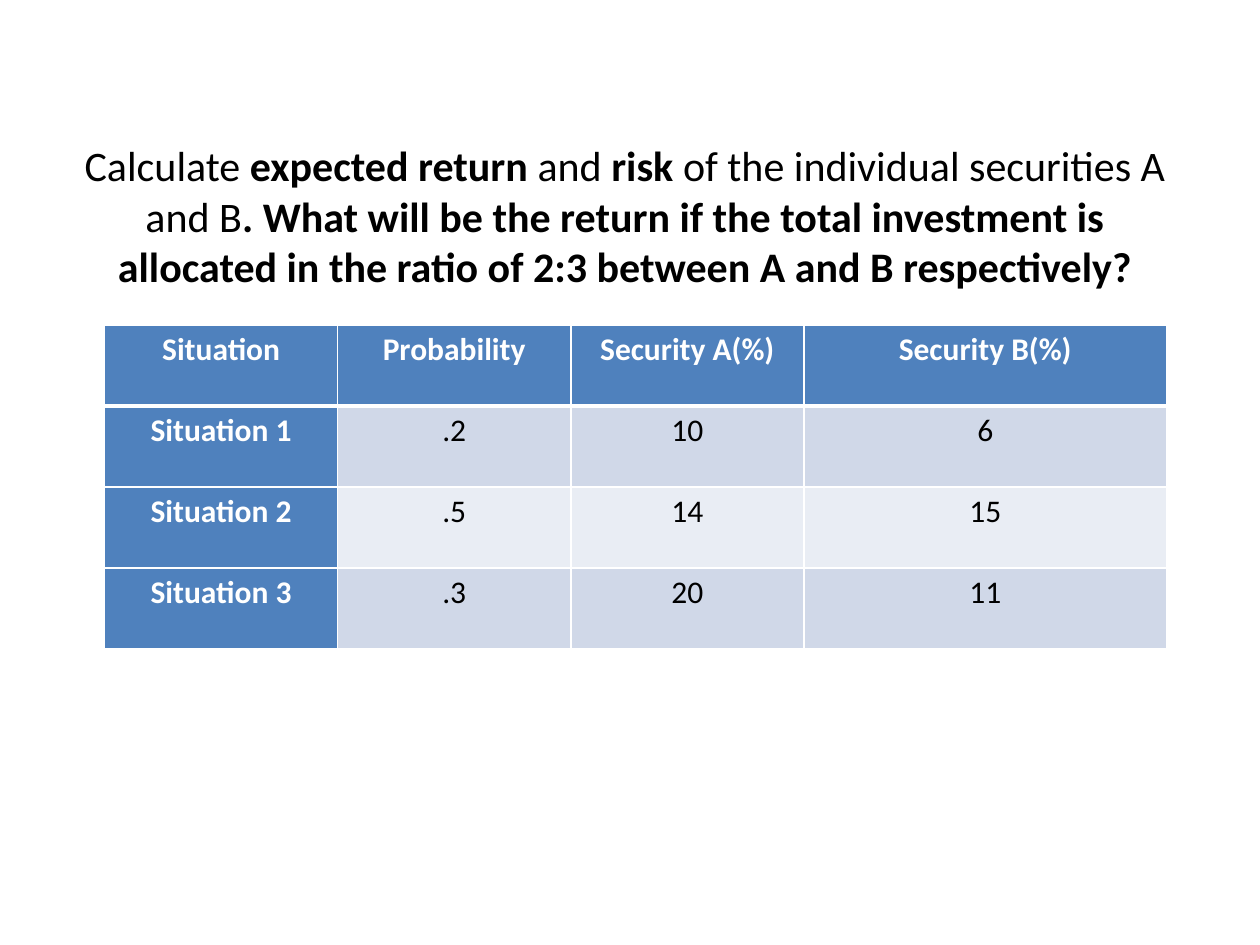
from lxml.etree import SubElement
from pptx import Presentation
from pptx.dml.color import RGBColor
from pptx.enum.text import MSO_ANCHOR, PP_ALIGN
from pptx.oxml.ns import qn
from pptx.util import Inches, Pt

COLORS = {"black": "000000", "white": "FFFFFF", "head": "4F81BD",
          "odd": "D0D8E8", "even": "E9EDF4"}
TITLE = [
    ("Calculate ", False),
    ("expected return ", True),
    ("and ", False),
    ("risk", True),
    (" of the individual securities A and B", False),
    (". What will be the return if the total investment is allocated "
     "in the ratio of 2:3 between A and B respectively?", True),
]
ROWS = [
    ("Situation", "Probability", "Security A(%)", "Security B(%)"),
    ("Situation 1", ".2", "10", "6"),
    ("Situation 2", ".5", "14", "15"),
    ("Situation 3", ".3", "20", "11"),
]
COL_WIDTHS = (1.85, 1.85, 1.85, 2.88)


def rgb(name):
    return RGBColor.from_string(COLORS[name])


def add_text(p, text, size=18, color="black", bold=False):
    r = p.add_run()
    r.text = text
    r.font.name = "Calibri"
    r.font.size = Pt(size)
    r.font.bold = bold
    r.font.color.rgb = rgb(color)


def set_borders(cell, **widths):
    tc_pr = cell._tc.get_or_add_tcPr()
    for side in "LRTB":
        ln = SubElement(tc_pr, qn(f"a:ln{side}"), w=str(Pt(widths.get(side, 1))))
        fill = SubElement(ln, qn("a:solidFill"))
        SubElement(fill, qn("a:srgbClr"), val=COLORS["white"])


def add_title(s, left, top, width, height):
    sp = s.shapes.title
    sp.left, sp.top, sp.width, sp.height = map(Inches, (left, top, width, height))
    tf = sp.text_frame
    tf.word_wrap = True
    tf.vertical_anchor = MSO_ANCHOR.MIDDLE
    p = tf.paragraphs[0]
    p.alignment = PP_ALIGN.CENTER
    for text, bold in TITLE:
        add_text(p, text, size=24, bold=bold)


def add_returns_table(s, left, top, width, height):
    box = map(Inches, (left, top, width, height))
    table = s.shapes.add_table(len(ROWS), len(COL_WIDTHS), *box).table
    table.first_col = True
    for col, col_width in zip(table.columns, COL_WIDTHS):
        col.width = Inches(col_width)
    for i, row in enumerate(ROWS):
        for j, text in enumerate(row):
            cell = table.cell(i, j)
            is_head = i == 0 or j == 0
            set_borders(cell, T=3 if i == 1 else 1, B=3 if i == 0 else 1)
            cell.fill.solid()
            cell.fill.fore_color.rgb = rgb("head" if is_head else "odd" if i % 2 else "even")
            cell.margin_left = cell.margin_right = Inches(0.07)
            cell.margin_top = cell.margin_bottom = 0
            p = cell.text_frame.paragraphs[0]
            p.alignment = PP_ALIGN.CENTER
            p.line_spacing = 1.15
            add_text(p, text, color="white" if is_head else "black", bold=is_head)


def main():
    prs = Presentation()
    prs.slide_width, prs.slide_height = Inches(10), Inches(7.5)
    s = prs.slides.add_slide(prs.slide_layouts[5])
    add_title(s, 0.42, 0.17, 9.08, 3.08)
    add_returns_table(s, 0.83, 2.58, sum(COL_WIDTHS), 2.57)
    prs.save("out.pptx")


if __name__ == "__main__":
    main()
